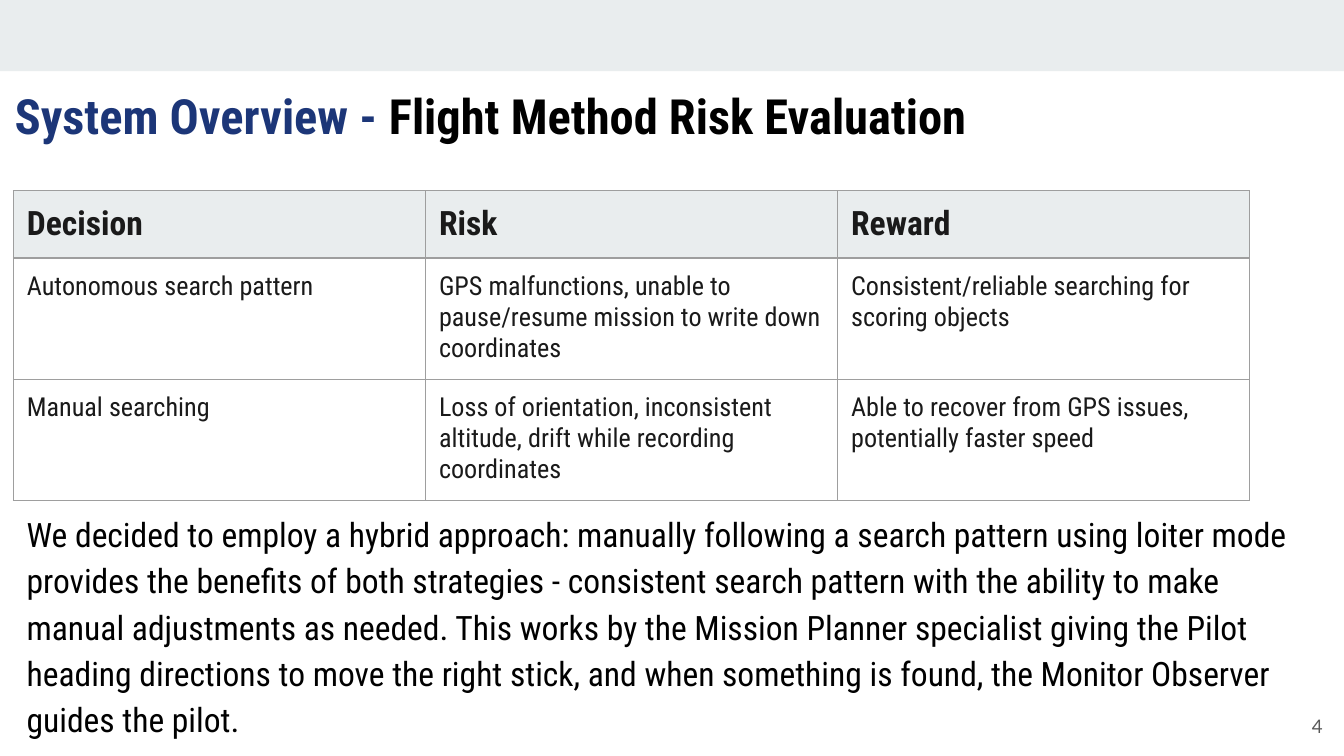
from lxml import etree
from pptx import Presentation, util as u
from pptx.dml.color import RGBColor
from pptx.enum import shapes, text
from pptx.oxml.ns import qn

TITLE = [("System Overview - ", "navy"), ("Flight Method Risk Evaluation", "black")]
OPTIONS = [
    ("Decision", "Risk", "Reward"),
    ("Autonomous search pattern",
     "GPS malfunctions, unable to pause/resume mission to write down coordinates",
     "Consistent/reliable searching for scoring objects"),
    ("Manual searching",
     "Loss of orientation, inconsistent altitude, drift while recording coordinates",
     "Able to recover from GPS issues, potentially faster speed"),
]
CONCLUSION = (
    "We decided to employ a hybrid approach: manually following a search pattern "
    "using loiter mode provides the benefits of both strategies - consistent search "
    "pattern with the ability to make manual adjustments as needed. This works by the "
    "Mission Planner specialist giving the Pilot heading directions to move the right "
    "stick, and when something is found, the Monitor Observer guides the pilot."
)
PAGE = "4"

COLORS = {"band": "E9EDEE", "navy": "1C3678", "black": "000000",
          "ink": "1A1A1A", "grey": "595959", "border": "9E9E9E"}
BODY_FONT, PAGE_FONT = "Roboto Condensed", "Lato"
WIDTH = 10
HEIGHT = WIDTH * 9 / 16
TABLE_WIDTH = 0.92 * WIDTH
ROW_HEIGHTS = [0.21, 0.5, 0.5]  # minimums: rows grow with their text
INSET = u.Inches(0.1)
MARGINS = {f"margin_{side}": INSET for side in ("left", "top", "right", "bottom")}


def color(name):
    return RGBColor.from_string(COLORS[name])


def apply(target, values):
    for name, value in values.items():
        setattr(target, name, value)


def paint(part, name):
    part.fill.solid()
    part.fill.fore_color.rgb = color(name)


def write(paragraph, words, ink, size, font=BODY_FONT, bold=False):
    run = paragraph.add_run()
    run.text = words
    apply(run.font, {"name": font, "size": u.Pt(size), "bold": bold})
    run.font.color.rgb = color(ink)


def add_box(slide, place, anchor=text.MSO_ANCHOR.MIDDLE, **paragraph_format):
    """Add a text box and return its first paragraph."""
    frame = slide.shapes.add_textbox(*map(u.Inches, place)).text_frame
    apply(frame, {**MARGINS, "word_wrap": True, "vertical_anchor": anchor})
    paragraph = frame.paragraphs[0]
    apply(paragraph, paragraph_format)
    return paragraph


def outline(cell):
    """Draw a thin line on all four sides; lines must precede the fill."""
    properties = cell._tc.get_or_add_tcPr()
    for position, side in enumerate(("lnL", "lnR", "lnT", "lnB")):
        line = etree.Element(qn(f"a:{side}"), w=str(u.Pt(0.75)))
        fill = etree.SubElement(line, qn("a:solidFill"))
        etree.SubElement(fill, qn("a:srgbClr"), val=COLORS["border"])
        properties.insert(position, line)


def add_options(slide):
    table = slide.shapes.add_table(
        len(OPTIONS), len(OPTIONS[0]), INSET, u.Inches(1.42),
        u.Inches(TABLE_WIDTH), u.Inches(sum(ROW_HEIGHTS))).table
    apply(table, {"first_row": False, "horz_banding": False})
    for r, (entries, height) in enumerate(zip(OPTIONS, ROW_HEIGHTS)):
        table.rows[r].height = u.Inches(height)
        heading = r == 0
        for c, words in enumerate(entries):
            cell = table.cell(r, c)
            apply(cell, MARGINS)
            if heading:
                paint(cell, "band")
            else:
                cell.fill.background()
            outline(cell)
            write(cell.text_frame.paragraphs[0], words, "ink",
                  18 if heading else 14, bold=heading)


def main():
    deck = Presentation()
    apply(deck, {"slide_width": u.Inches(WIDTH), "slide_height": u.Inches(HEIGHT)})
    slide = deck.slides.add_slide(deck.slide_layouts[6])

    band = slide.shapes.add_shape(shapes.MSO_SHAPE.RECTANGLE, 0, 0,
                                  u.Inches(WIDTH), u.Inches(0.53))
    band.shadow.inherit = False
    paint(band, "band")
    band.line.fill.background()

    title = add_box(slide, (0.01, 0.54, 8.41, 0.59), text.MSO_ANCHOR.TOP)
    for words, ink in TITLE:
        write(title, words, ink, 26, bold=True)

    add_options(slide)

    conclusion = add_box(slide, (0.1, 3.75, 9.73, 1.78),
                         line_spacing=1.15, space_after=u.Pt(16))
    write(conclusion, CONCLUSION, "black", 18)

    page = add_box(slide, (9.34, 5.19, 0.6, 0.43), alignment=text.PP_ALIGN.RIGHT)
    write(page, PAGE, "grey", 10, PAGE_FONT)

    deck.save("out.pptx")


if __name__ == "__main__":
    main()
